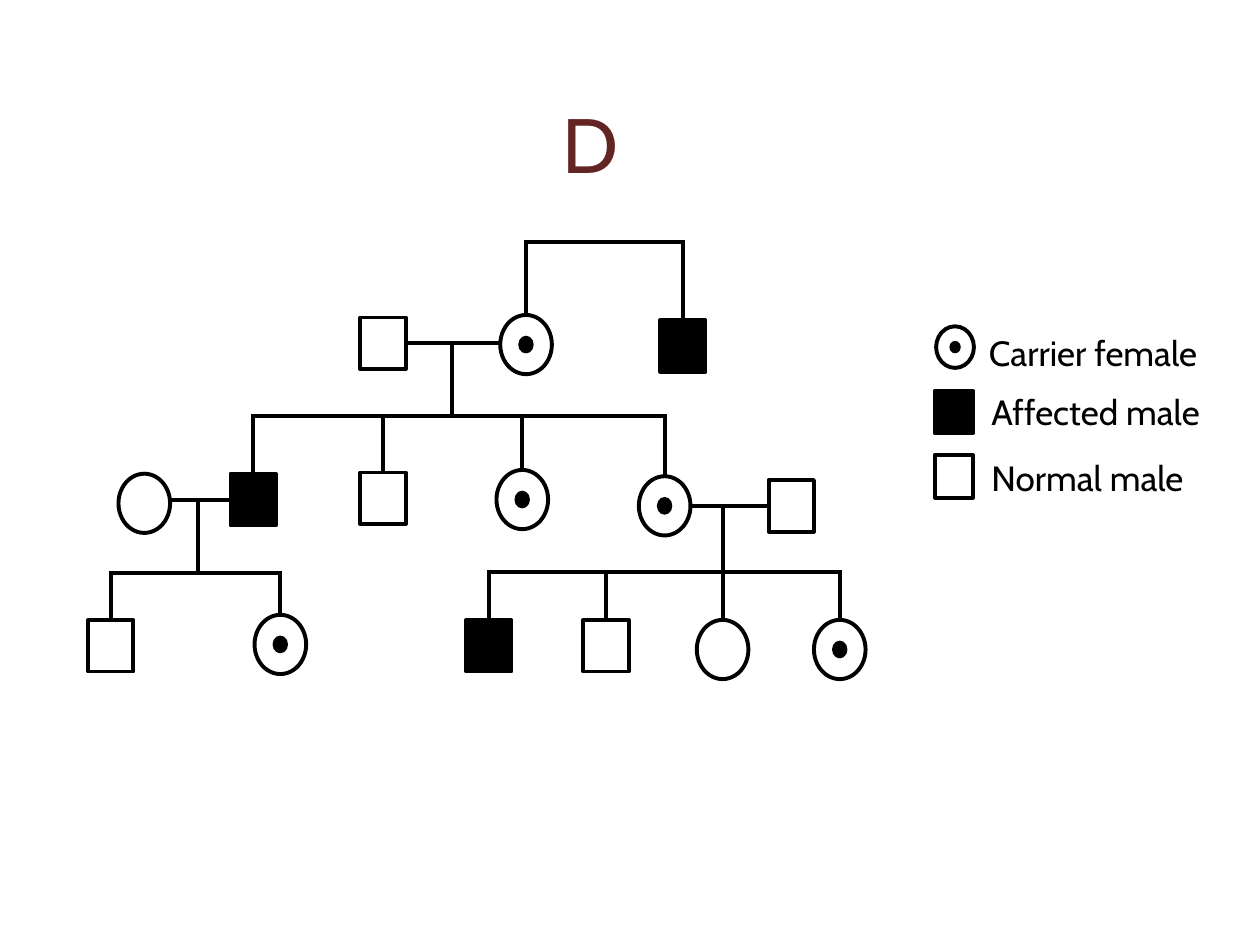
from lxml import etree
from pptx import Presentation
from pptx.dml.color import RGBColor
from pptx.enum.shapes import MSO_CONNECTOR, MSO_SHAPE
from pptx.enum.text import MSO_ANCHOR, MSO_AUTO_SIZE, PP_ALIGN
from pptx.oxml.ns import qn
from pptx.util import Inches, Pt

BLACK = RGBColor(0x00, 0x00, 0x00)
MAROON = RGBColor(0x63, 0x25, 0x23)
FONT = "Cabin"
LINE_WIDTH = Pt(2.25)

RECTANGLE, OVAL = MSO_SHAPE.RECTANGLE, MSO_SHAPE.OVAL
STRAIGHT = MSO_CONNECTOR.STRAIGHT
CENTER, MIDDLE = PP_ALIGN.CENTER, MSO_ANCHOR.MIDDLE
FIT_SHAPE = MSO_AUTO_SIZE.SHAPE_TO_FIT_TEXT

MALE_SIZE = (0.36, 0.41)
FEMALE_SIZE = (0.41, 0.47)
DOT_RATIO = 0.3
TOP, LEFT, RIGHT = 0, 1, 3


def add_symbol(slide, kind, left, top, size, filled=False, outlined=True):
    symbol = slide.shapes.add_shape(kind, *(Inches(v) for v in (left, top, *size)))
    symbol.shadow.inherit = False
    if filled:
        symbol.fill.solid()
        symbol.fill.fore_color.rgb = BLACK
    else:
        symbol.fill.background()
    if outlined:
        symbol.line.color.rgb = BLACK
        symbol.line.width = LINE_WIDTH
    else:
        symbol.line.fill.background()
    return symbol


def add_male(slide, left, top, affected=False, size=MALE_SIZE):
    return add_symbol(slide, RECTANGLE, left, top, size, filled=affected)


def add_female(slide, left, top, carrier=False, size=FEMALE_SIZE):
    female = add_symbol(slide, OVAL, left, top, size)
    if carrier:
        width, height = size
        margin = (1 - DOT_RATIO) / 2
        add_symbol(slide, OVAL, left + width * margin, top + height * margin,
                   (width * DOT_RATIO, height * DOT_RATIO), filled=True, outlined=False)
    return female


def add_line(slide, x1, y1, x2, y2):
    line = slide.shapes.add_connector(STRAIGHT, x1, y1, x2, y2)
    line.line.color.rgb = BLACK
    line.line.width = LINE_WIDTH
    etree.SubElement(line._element.spPr, qn("a:effectLst"))
    return line


def add_marriage(slide, husband, wife, stem_x, bar_y):
    """Join a couple and run a stem down to the bar of their children."""
    y = husband.top + husband.height // 2
    if husband.left < wife.left:
        husband_x, site, wife_x = husband.left + husband.width, RIGHT, wife.left
    else:
        husband_x, site, wife_x = husband.left, LEFT, wife.left + wife.width
    couple = add_line(slide, husband_x, y, wife_x, y)
    couple.begin_connect(husband, site)
    add_line(slide, Inches(stem_x), y, Inches(stem_x), Inches(bar_y))


def add_sibship(slide, children, bar_y):
    """Draw the bar over brothers and sisters and a drop to each of them."""
    y = Inches(bar_y)
    centers = [child.left + child.width // 2 for child in children]
    overhang = LINE_WIDTH // 2
    add_line(slide, centers[0] - overhang, y, centers[-1] + overhang, y)
    for child, x in zip(children, centers):
        drop = add_line(slide, x, y, x, child.top)
        drop.end_connect(child, TOP)


def add_text(slide, text, left, top, width, height, size, color):
    box = slide.shapes.add_textbox(*(Inches(v) for v in (left, top, width, height)))
    frame = box.text_frame
    frame.text = text
    font = frame.paragraphs[0].runs[0].font
    font.name, font.size = FONT, Pt(size)
    font.color.rgb = color
    return frame


def add_title(slide):
    frame = add_text(slide, "D", 0, 0.81, 9.38, 0.65, 44, MAROON)
    frame.word_wrap = True
    frame.vertical_anchor = MIDDLE
    frame.paragraphs[0].alignment = CENTER


def add_legend(slide):
    add_female(slide, 7.43, 2.59, carrier=True, size=(0.3, 0.33))
    add_male(slide, 7.42, 3.1, affected=True, size=(0.3, 0.34))
    add_male(slide, 7.42, 3.61, size=(0.3, 0.34))
    for label, left, top, width in (("Carrier female", 7.75, 2.58, 1.88),
                                    ("Affected male", 7.77, 3.05, 1.9),
                                    ("Normal male", 7.77, 3.57, 1.78)):
        frame = add_text(slide, label, left, top, width, 0.43, 20, BLACK)
        frame.word_wrap = False
        frame.auto_size = FIT_SHAPE


def add_pedigree(slide):
    # First generation
    father = add_male(slide, 2.86, 2.52)
    mother = add_female(slide, 3.97, 2.5, carrier=True)
    uncle = add_male(slide, 5.24, 2.54, affected=True)
    add_sibship(slide, [mother, uncle], 1.92)

    # Second generation, with two partners who married in
    affected_son = add_male(slide, 1.83, 3.76, affected=True)
    normal_son = add_male(slide, 2.86, 3.75)
    single_daughter = add_female(slide, 3.94, 3.73, carrier=True)
    married_daughter = add_female(slide, 5.07, 3.78, carrier=True)
    add_marriage(slide, father, mother, 3.59, 3.3)
    add_sibship(slide, [affected_son, normal_son, single_daughter, married_daughter], 3.3)
    sons_wife = add_female(slide, 0.94, 3.76)
    daughters_husband = add_male(slide, 6.1, 3.81)

    # Third generation, the son's family
    sons_children = [add_male(slide, 0.7, 4.92),
                     add_female(slide, 2.02, 4.88, carrier=True)]
    add_marriage(slide, affected_son, sons_wife, 1.57, 4.55)
    add_sibship(slide, sons_children, 4.55)

    # Third generation, the daughter's family
    daughters_children = [add_male(slide, 3.7, 4.92, affected=True),
                          add_male(slide, 4.63, 4.92),
                          add_female(slide, 5.53, 4.92),
                          add_female(slide, 6.46, 4.92, carrier=True)]
    add_marriage(slide, daughters_husband, married_daughter, 5.74, 4.54)
    add_sibship(slide, daughters_children, 4.54)


def main():
    presentation = Presentation()
    presentation.slide_width, presentation.slide_height = Inches(10), Inches(7.5)
    slide = presentation.slides.add_slide(presentation.slide_layouts[6])
    add_title(slide)
    add_legend(slide)
    add_pedigree(slide)
    presentation.save("out.pptx")


if __name__ == "__main__":
    main()
